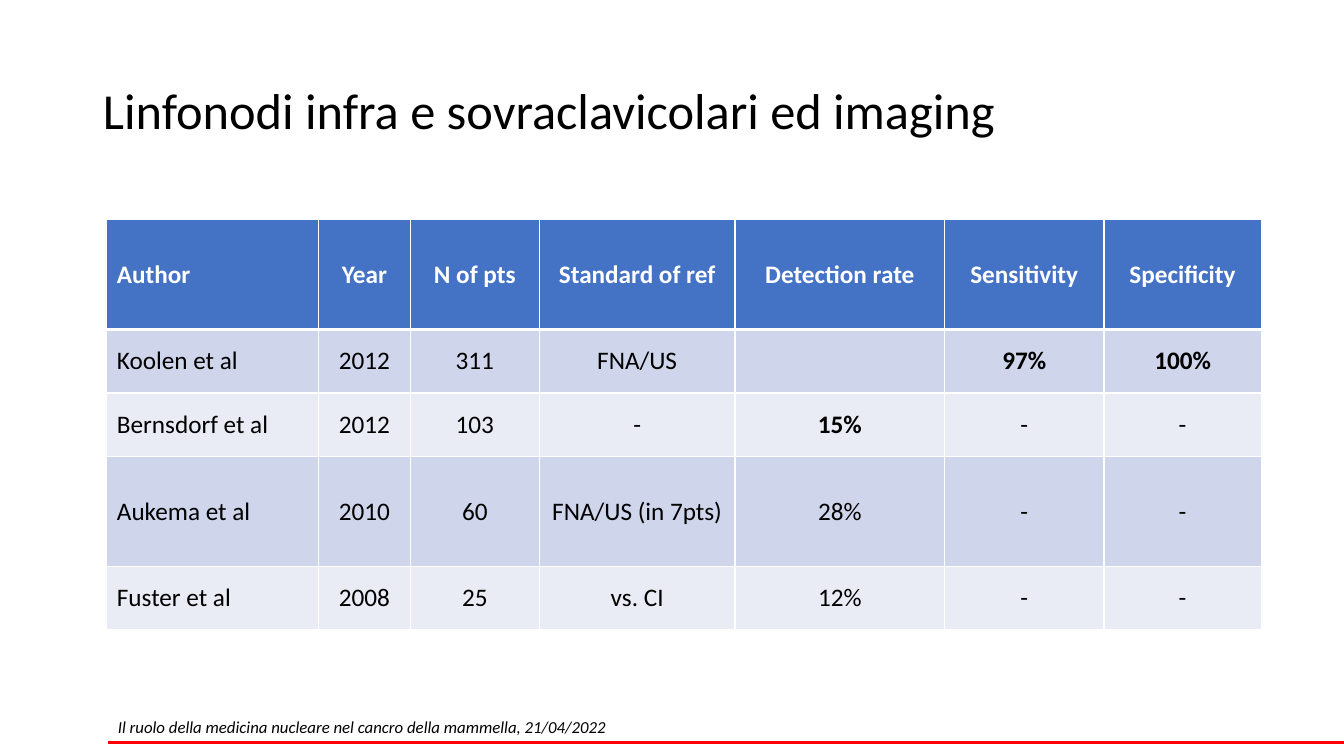
import pptx
import pptx.util
import pptx.dml.color
import pptx.enum.shapes
import pptx.enum.text
import pptx.oxml
import pptx.oxml.ns
from pptx.util import Inches

RGBColor = pptx.dml.color.RGBColor
BLACK = RGBColor(0x00, 0x00, 0x00)
WHITE = RGBColor(0xFF, 0xFF, 0xFF)
RED = RGBColor(0xFF, 0x00, 0x00)
BLUE = RGBColor(0x44, 0x72, 0xC4)
BANDS = RGBColor(0xCF, 0xD5, 0xEA), RGBColor(0xE9, 0xEB, 0xF5)
ALIGN = pptx.enum.text.PP_ALIGN
ANCHOR = pptx.enum.text.MSO_ANCHOR

HEAD = ["Author", "Year", "N of pts", "Standard of ref",
        "Detection rate", "Sensitivity", "Specificity"]
STUDIES = [
    ["Koolen et al", "2012", "311", "FNA/US", "", "97%", "100%"],
    ["Bernsdorf et al", "2012", "103", "-", "15%", "-", "-"],
    ["Aukema et al", "2010", "60", "FNA/US (in 7pts)", "28%", "-", "-"],
    ["Fuster et al", "2008", "25", "vs. CI", "12%", "-", "-"],
]
STRONG = {"97%", "100%", "15%"}
WIDTHS = [2.1, 0.91, 1.28, 1.94, 2.08, 1.58, 1.56]
HEIGHTS = [1.09, 0.63, 0.63, 1.09, 0.63]


class Deck:
    font = "Calibri"

    def __init__(self):
        self.file = pptx.Presentation()
        self.file.slide_width = Inches(13.33)
        self.file.slide_height = Inches(7.5)
        self.slide = self.file.slides.add_slide(self.file.slide_layouts[5])

    def words(self, frame, text, size, color=BLACK, bold=False,
              italic=False, align=ALIGN.LEFT):
        frame.text = text
        para = frame.paragraphs[0]
        para.alignment = align
        for run in para.runs:
            run.font.name = self.font
            run.font.size = pptx.util.Pt(size)
            run.font.bold = bold
            run.font.italic = italic
            run.font.color.rgb = color
        return para

    def title(self, text, left, top, width, height):
        shape = self.slide.shapes.title
        shape.left, shape.top = Inches(left), Inches(top)
        shape.width, shape.height = Inches(width), Inches(height)
        para = self.words(shape.text_frame, text, 36)
        para.line_spacing = 0.9
        shape.text_frame.vertical_anchor = ANCHOR.MIDDLE

    def label(self, text, left, top, width, height):
        box = self.slide.shapes.add_textbox(
            Inches(left), Inches(top), Inches(width), Inches(height))
        box.text_frame.word_wrap = False
        self.words(box.text_frame, text, 12, italic=True)

    def line(self, left, right, y, color, weight):
        rule = self.slide.shapes.add_connector(
            pptx.enum.shapes.MSO_CONNECTOR.STRAIGHT,
            Inches(left), Inches(y), Inches(right), Inches(y))
        rule.line.color.rgb = color
        rule.line.width = pptx.util.Pt(weight)
        props = rule._element.spPr
        props.append(pptx.oxml.parse_xml(
            f"<a:effectLst {pptx.oxml.ns.nsdecls('a')}/>"))

    def border(self, cell, sides):
        props = cell._tc.get_or_add_tcPr()
        for side, weight in sides.items():
            props.append(pptx.oxml.parse_xml(
                f"<a:ln{side} {pptx.oxml.ns.nsdecls('a')} "
                f'w="{pptx.util.Pt(weight)}"><a:solidFill>'
                f'<a:srgbClr val="{WHITE}"/></a:solidFill></a:ln{side}>'))

    def table(self, rows, left, top, widths, heights):
        grid = self.slide.shapes.add_table(
            len(rows), len(widths), Inches(left), Inches(top),
            Inches(sum(widths)), Inches(sum(heights))).table
        for col, width in zip(grid.columns, widths):
            col.width = Inches(width)
        for row, height in zip(grid.rows, heights):
            row.height = Inches(height)
        for r, texts in enumerate(rows):
            for c, text in enumerate(texts):
                cell = grid.cell(r, c)
                head = r == 0
                # Thick rule between header and body
                self.border(cell, {"L": 1, "R": 1, "T": 3 if r == 1 else 1,
                                   "B": 3 if head else 1})
                cell.fill.solid()
                cell.fill.fore_color.rgb = BLUE if head else BANDS[(r - 1) % 2]
                cell.vertical_anchor = ANCHOR.MIDDLE
                self.words(cell.text_frame, text, 18,
                           color=WHITE if head else BLACK,
                           bold=head or text in STRONG,
                           align=ALIGN.CENTER if c else ALIGN.LEFT)


def main():
    deck = Deck()
    # Title
    deck.title("Linfonodi infra e sovraclavicolari ed imaging",
               0.92, 0.4, 11.5, 1.45)
    # Table of studies
    deck.table([HEAD] + STUDIES, 1.06, 2.18, WIDTHS, HEIGHTS)
    # Footer
    deck.line(1.07, 13.33, 7.37, RED, 2.25)
    deck.label("Il ruolo della medicina nucleare nel cancro della mammella, "
               "21/04/2022", 1.07, 7.06, 5.18, 0.3)
    deck.file.save("out.pptx")


if __name__ == "__main__":
    main()
